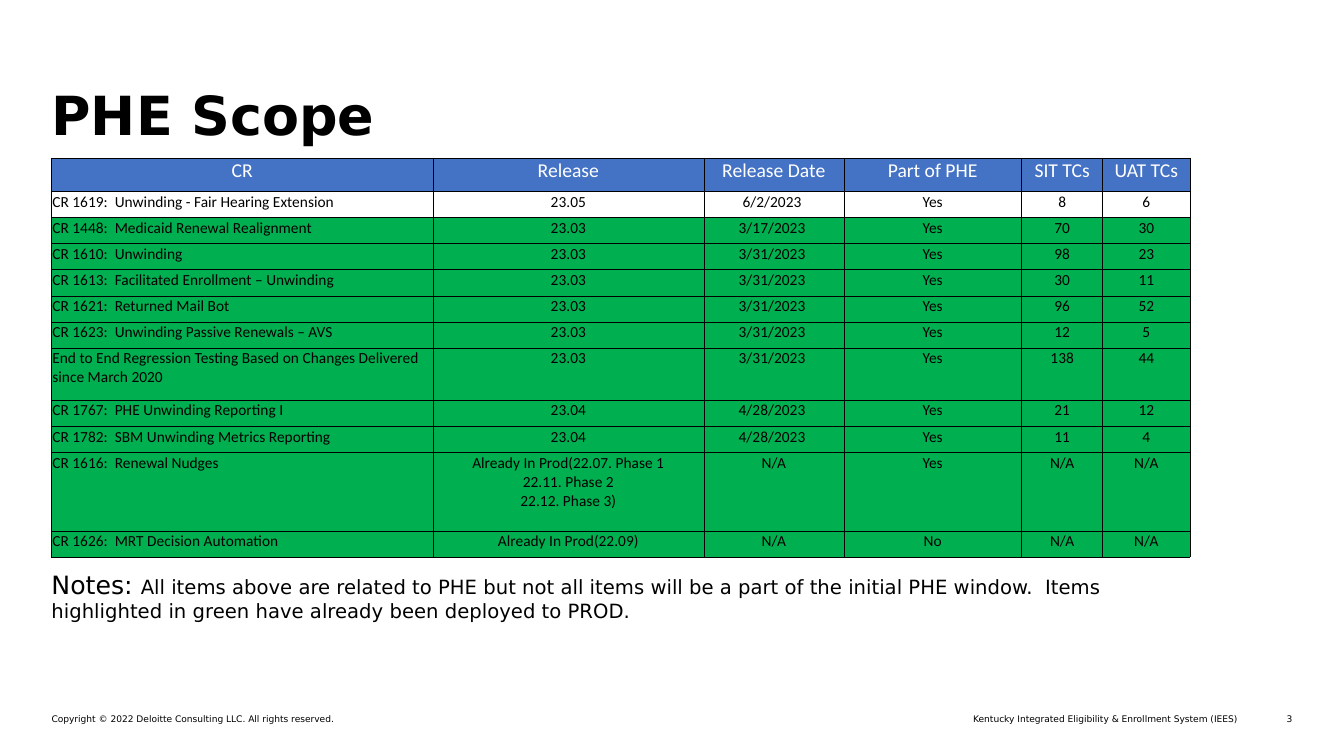
import pptx
import pptx.util
import pptx.dml.color
import pptx.enum.text
import pptx.oxml.ns
import lxml.etree

Pt = pptx.util.Pt
ALIGN = pptx.enum.text.PP_ALIGN
ANCHOR = pptx.enum.text.MSO_ANCHOR
COLORS = {"black": "000000", "white": "FFFFFF", "header": "4472C4", "deployed": "00B050"}
LEFT = 36.8
ROW_HEIGHT = 18.66
HEADER_HEIGHT = 23.76


def add_span(para, text, size, font, color="black", bold=False):
    span = para.add_run()
    span.text = text
    span.font.size = Pt(size)
    span.font.name = font
    span.font.bold = bold
    span.font.color.rgb = pptx.dml.color.RGBColor.from_string(COLORS[color])


def add_borders(cell):
    """Draw a thin black line on all four sides of a table cell."""
    properties = cell._tc.get_or_add_tcPr()
    for side in ("a:lnL", "a:lnR", "a:lnT", "a:lnB"):
        line = lxml.etree.SubElement(properties, pptx.oxml.ns.qn(side), w=str(Pt(0.5)))
        fill = lxml.etree.SubElement(line, pptx.oxml.ns.qn("a:solidFill"))
        lxml.etree.SubElement(fill, pptx.oxml.ns.qn("a:srgbClr"), val=COLORS["black"])


deck = pptx.Presentation()
deck.slide_width = Pt(960)
deck.slide_height = Pt(540)
page = deck.slides.add_slide(deck.slide_layouts[6])

# Title, notes and footer: left, top, width, height, alignment, anchor, line spacing, spans
texts = [
    (499, 509.8, 385.2, 8, ALIGN.RIGHT, ANCHOR.TOP, 1,
     [("Kentucky Integrated Eligibility & Enrollment System (IEES)", 6.5, False)]),
    (LEFT, 509.8, 422, 8, ALIGN.LEFT, ANCHOR.TOP, 1,
     [("Copyright © 2022 Deloitte Consulting LLC. All rights reserved.", 6.5, False)]),
    (898.6, 509.8, 24.5, 8, ALIGN.RIGHT, ANCHOR.TOP, 1, [("3", 6.5, False)]),
    (LEFT, 79.2, 886.3, 26.6, ALIGN.LEFT, ANCHOR.BOTTOM, 0.95, [("PHE Scope", 38.5, True)]),
    (LEFT, 408.2, 828, 26.6, ALIGN.LEFT, ANCHOR.TOP, 0.95,
     [("Notes: ", 18, False),
      ("All items above are related to PHE but not all items will be a part of the initial "
       "PHE window.  Items highlighted in green have already been deployed to PROD.", 14, False)]),
]
for left, top, width, height, align, anchor, spacing, spans in texts:
    box = page.shapes.add_textbox(Pt(left), Pt(top), Pt(width), Pt(height))
    frame = box.text_frame
    frame.word_wrap = True
    frame.vertical_anchor = anchor
    frame.margin_left = frame.margin_right = frame.margin_top = frame.margin_bottom = 0
    para = frame.paragraphs[0]
    para.alignment = align
    para.line_spacing = spacing
    for text, size, bold in spans:
        add_span(para, text, size, "DejaVu Sans", bold=bold)

# Change requests, each with its height in row units
header = ("CR", "Release", "Release Date", "Part of PHE", "SIT TCs", "UAT TCs")
requests = [
    (1, "CR 1619:  Unwinding - Fair Hearing Extension", "23.05", "6/2/2023 ", "Yes", "8", "6"),
    (1, "CR 1448:  Medicaid Renewal Realignment", "23.03", "3/17/2023 ", "Yes", "70", "30"),
    (1, "CR 1610:  Unwinding", "23.03", "3/31/2023 ", "Yes", "98", "23"),
    (1, "CR 1613:  Facilitated Enrollment – Unwinding", "23.03", "3/31/2023 ", "Yes", "30", "11"),
    (1, "CR 1621:  Returned Mail Bot", "23.03", "3/31/2023 ", "Yes", "96", "52"),
    (1, "CR 1623:  Unwinding Passive Renewals – AVS", "23.03", "3/31/2023 ", "Yes", "12", "5"),
    (2, "End to End Regression Testing Based on Changes Delivered since March 2020",
     "23.03", "3/31/2023 ", "Yes", "138", "44"),
    (1, "CR 1767:  PHE Unwinding Reporting I", "23.04", "4/28/2023 ", "Yes", "21", "12"),
    (1, "CR 1782:  SBM Unwinding Metrics Reporting", "23.04", "4/28/2023 ", "Yes", "11", "4"),
    (3, "CR 1616:  Renewal Nudges",
     "Already In Prod(22.07. Phase 1\n22.11. Phase 2\n22.12. Phase 3)", "N/A", "Yes", "N/A", "N/A"),
    (1, "CR 1626:  MRT Decision Automation", "Already In Prod(22.09)", "N/A", "No", "N/A", "N/A"),
]
column_widths = [272.4, 193.6, 100, 127, 58, 62.2]
row_heights = [HEADER_HEIGHT] + [ROW_HEIGHT * request[0] for request in requests]
rows = [header] + [request[1:] for request in requests]

table = page.shapes.add_table(len(rows), len(header), Pt(LEFT), Pt(113),
                              Pt(sum(column_widths)), Pt(sum(row_heights))).table
table.first_row = False
table.horz_banding = False
for column, width in zip(table.columns, column_widths):
    column.width = Pt(width)

for row_index, values in enumerate(rows):
    table.rows[row_index].height = Pt(row_heights[row_index])
    is_header = row_index == 0
    for column_index, value in enumerate(values):
        cell = table.cell(row_index, column_index)
        cell.margin_left = cell.margin_right = cell.margin_top = Pt(0.6)
        cell.margin_bottom = 0
        add_borders(cell)
        if row_index == 1:
            cell.fill.background()
        else:
            cell.fill.solid()
            fill_name = "header" if is_header else "deployed"
            cell.fill.fore_color.rgb = pptx.dml.color.RGBColor.from_string(COLORS[fill_name])
        para = cell.text_frame.paragraphs[0]
        para.alignment = ALIGN.CENTER if is_header or column_index > 0 else ALIGN.LEFT
        for line_index, line in enumerate(value.split("\n")):
            if line_index > 0:
                para.add_line_break()
            add_span(para, line, 14 if is_header else 11, "Calibri",
                     "white" if is_header else "black")

deck.save("out.pptx")
